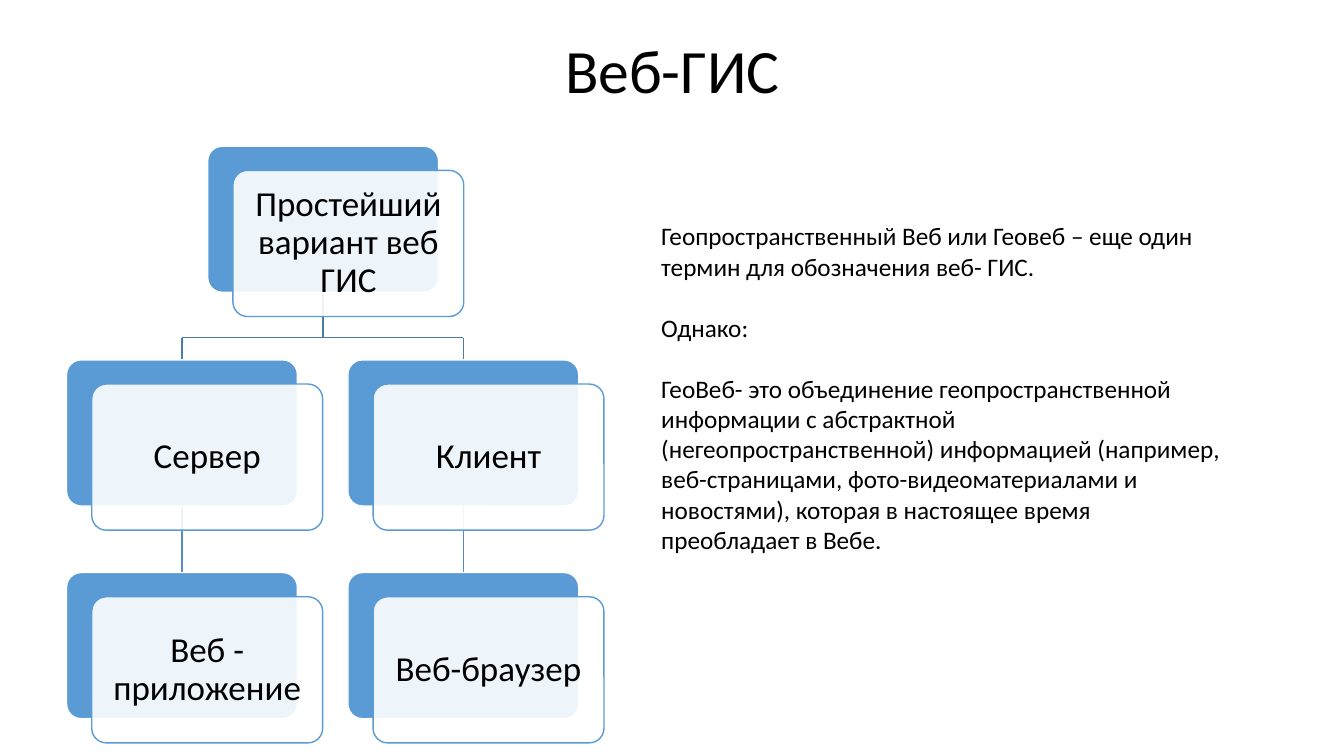
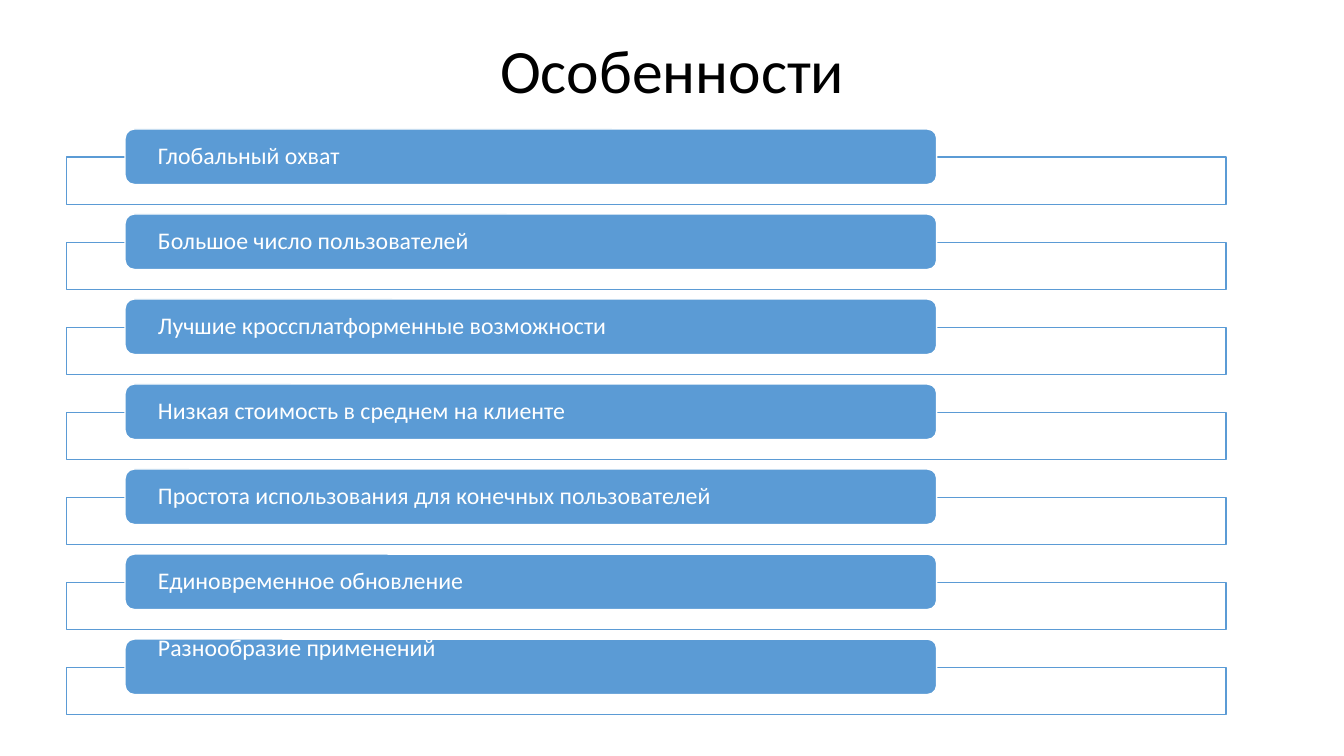
from dataclasses import dataclass

from pptx import Presentation
from pptx.dml.color import RGBColor
from pptx.enum.shapes import MSO_CONNECTOR, MSO_SHAPE
from pptx.enum.text import MSO_ANCHOR as ANCHOR, PP_ALIGN as ALIGN
from pptx.oxml.ns import qn
from pptx.util import Inches, Pt


@dataclass(frozen=True)
class Theme:
    font: str = "Calibri"
    text: str = "000000"
    white: str = "FFFFFF"
    blue: str = "5B9BD5"
    branch: str = "497CAB"
    stem: str = "538DC1"
    title_size: int = 44
    card_size: int = 25
    body_size: int = 18
    item_size: int = 17
    tight: float = 0.9
    line_width: int = 1


class Deck:
    def __init__(self, theme):
        self.theme = theme
        self.prs = Presentation()
        self.prs.slide_width, self.prs.slide_height = Inches(13.33), Inches(7.5)
        self.s = None

    def slide(self, title):
        self.s = self.prs.slides.add_slide(self.prs.slide_layouts[5])
        sp = self.s.shapes.title
        sp.left, sp.top, sp.width, sp.height = map(Inches, (0.92, 0, 11.5, 1.45))
        self.set_text(sp, [title], self.theme.title_size, self.theme.text,
                      align=ALIGN.CENTER, spacing=self.theme.tight)

    def set_text(self, sp, paragraphs, size, color, align=ALIGN.LEFT,
                 anchor=ANCHOR.MIDDLE, spacing=1.0, gap=0):
        tf = sp.text_frame
        tf.word_wrap = True
        tf.vertical_anchor = anchor
        tf.text = "\n".join(paragraphs)
        for i, p in enumerate(tf.paragraphs):
            p.alignment = align
            p.line_spacing = spacing
            p.space_before = Pt(gap if i else 0)
            for r in p.runs:
                r.font.name = self.theme.font
                r.font.size = Pt(size)
                r.font.color.rgb = RGBColor.from_string(color)

    def box(self, kind, x, y, w, h, fill, line, alpha=None, radius=None):
        """Add a preset shape; alpha is the opacity of its fill in percent."""
        sp = self.s.shapes.add_shape(kind, *map(Inches, (x, y, w, h)))
        sp.shadow.inherit = False
        sp.fill.solid()
        sp.fill.fore_color.rgb = RGBColor.from_string(fill)
        sp.line.color.rgb = RGBColor.from_string(line)
        sp.line.width = Pt(self.theme.line_width)
        if radius is not None:
            sp.adjustments[0] = radius
        if alpha is not None:
            clr = sp.element.spPr.find(qn("a:solidFill"))[0]
            clr.append(clr.makeelement(qn("a:alpha"), {"val": str(alpha * 1000)}))
        return sp

    def line(self, x1, y1, x2, y2, color):
        cn = self.s.shapes.add_connector(
            MSO_CONNECTOR.STRAIGHT, *map(Inches, (x1, y1, x2, y2)))
        cn.line.color.rgb = RGBColor.from_string(color)
        cn.line.width = Pt(self.theme.line_width)
        sp_pr = cn.element.spPr
        sp_pr.append(sp_pr.makeelement(qn("a:effectLst"), {}))

    def card(self, x, y, w, h, text):
        """Add a blue plate with a translucent labelled plate shifted over it."""
        t = self.theme
        self.box(MSO_SHAPE.ROUNDED_RECTANGLE, x, y, w, h, t.blue, t.white, radius=0.1)
        sp = self.box(MSO_SHAPE.ROUNDED_RECTANGLE, x + 0.25, y + 0.24, w, h,
                      t.white, t.blue, alpha=90, radius=0.1)
        tf = sp.text_frame
        tf.margin_left = tf.margin_right = tf.margin_top = tf.margin_bottom = Inches(0.1)
        self.set_text(sp, [text], t.card_size, t.text, ALIGN.CENTER, spacing=t.tight)

    def body(self, x, y, w, h, paragraphs):
        sp = self.s.shapes.add_textbox(*map(Inches, (x, y, w, h)))
        self.set_text(sp, paragraphs, self.theme.body_size, self.theme.text,
                      anchor=ANCHOR.TOP, gap=22)

    def item(self, y, text, lift=0):
        """Add a list bar with its pill; lift raises the text within the pill."""
        t = self.theme
        self.box(MSO_SHAPE.RECTANGLE, 0.66, y + 0.28, 11.5, 0.47, t.white, t.blue, alpha=90)
        sp = self.box(MSO_SHAPE.ROUNDED_RECTANGLE, 1.24, y, 8.05, 0.55, t.blue, t.white)
        tf = sp.text_frame
        tf.margin_left = tf.margin_right = Inches(0.3)
        tf.margin_top, tf.margin_bottom = 0, Inches(2 * lift)
        self.set_text(sp, [text], t.item_size, t.white, spacing=t.tight)


def web_gis(deck):
    t = deck.theme
    deck.slide("Веб-ГИС")
    w, h = 2.29, 1.45
    root_x, root_y = 2.06, 1.45
    rows, bar_y = (3.57, 5.68), 3.35
    columns = [(0.66, ("Сервер", "Веб - приложение")),
               (3.45, ("Клиент", "Веб-браузер"))]
    centers = [x + w / 2 for x, _ in columns]
    root_center = root_x + w / 2

    deck.line(root_center, root_y + h, root_center, bar_y, t.branch)
    deck.line(centers[0], bar_y, centers[1], bar_y, t.branch)
    for center in centers:
        deck.line(center, bar_y, center, rows[0], t.branch)
        deck.line(center, rows[0] + h, center, rows[1], t.stem)

    deck.card(root_x, root_y, w, h, "Простейший вариант веб ГИС")
    for x, labels in columns:
        for y, label in zip(rows, labels):
            deck.card(x, y, w, h, label)

    deck.body(6.46, 2.14, 5.84, 3.43, [
        "Геопространственный Веб или Геовеб – еще один термин для обозначения веб- ГИС.",
        "Однако:",
        "ГеоВеб- это объединение геопространственной информации с абстрактной "
        "(негеопространственной) информацией (например, веб-страницами, "
        "фото-видеоматериалами и новостями), которая в настоящее время преобладает в Вебе.",
    ])


def features(deck):
    deck.slide("Особенности")
    items = ["Глобальный охват", "Большое число пользователей",
             "Лучшие кроссплатформенные возможности",
             "Низкая стоимость в среднем на клиенте",
             "Простота использования для конечных пользователей",
             "Единовременное обновление", "Разнообразие применений"]
    first_y, last_y = 1.28, 6.34
    last = len(items) - 1
    for i, text in enumerate(items):
        deck.item(first_y + i * (last_y - first_y) / last, text,
                  lift=0.18 if i == last else 0)


def main():
    deck = Deck(Theme())
    web_gis(deck)
    features(deck)
    deck.prs.save("out.pptx")


if __name__ == "__main__":
    main()
